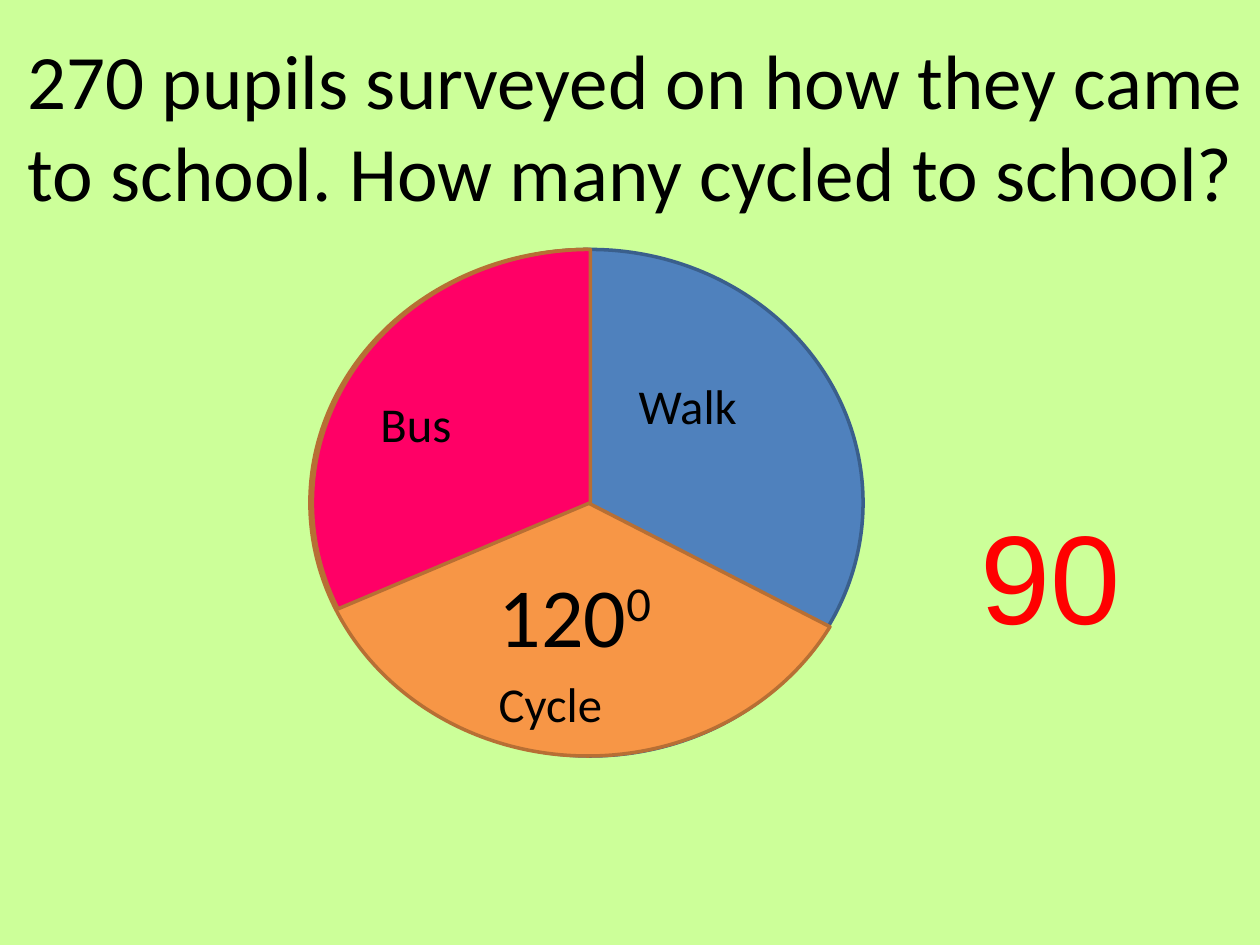
import pptx
import pptx.util
import pptx.dml.color
import pptx.enum.shapes
from pptx.util import Inches

THEME = {
    "background": "CCFF99", "ink": "000000", "answer": "FF0000",
    "walk": "4F81BD", "walk_line": "3A5F8C",
    "cycle": "F79646", "bus": "FF0066", "slice_line": "B76F34",
    "title_size": 44, "label_size": 48, "answer_size": 72,
}


def color(name):
    return pptx.dml.color.RGBColor.from_string(THEME[name])


def add_text(box, lines, size="label_size", ink="ink", font="Calibri"):
    """Each line is a list of (text, raised) pairs."""
    frame = box.text_frame
    frame.word_wrap = True
    for index, line in enumerate(lines):
        para = frame.add_paragraph() if index else frame.paragraphs[0]
        for text, raised in line:
            span = para.add_run()
            span.text = text
            span.font.name = font
            span.font.size = pptx.util.Pt(THEME[size])
            span.font.color.rgb = color(ink)
            if raised:
                span.font._element.set("baseline", "30000")


deck = pptx.Presentation()
deck.slide_width, deck.slide_height = Inches(10), Inches(7.5)
page = deck.slides.add_slide(deck.slide_layouts[6])
page.background.fill.solid()
page.background.fill.fore_color.rgb = color("background")

# Pie: a full disc for Walk, with the other slices laid over it.
# Slices end at 12 o'clock (270 degrees); angles run clockwise from 3 o'clock.
kinds = pptx.enum.shapes.MSO_SHAPE
for kind, left, width, fill, line, start in [
    (kinds.OVAL, 2.52, 4.33, "walk", "walk_line", None),
    (kinds.PIE, 2.46, 4.41, "cycle", "slice_line", 27.11),
    (kinds.PIE, 2.48, 4.41, "bus", "slice_line", 157.17),
]:
    piece = page.shapes.add_shape(
        kind, Inches(left), Inches(1.98), Inches(width), Inches(4.02))
    piece.shadow.inherit = False
    piece.fill.solid()
    piece.fill.fore_color.rgb = color(fill)
    piece.line.color.rgb = color(line)
    piece.line.width = pptx.util.Pt(2)
    if start is not None:
        for index, angle in enumerate((start, 270)):
            piece.adjustments[index] = angle * 0.6  # 60000ths of a degree / 100000

# Question
box = page.shapes.add_textbox(Inches(0.12), Inches(0.21), Inches(10.08), Inches(1.58))
question = "270 pupils surveyed on how they came to school. How many cycled to school?"
add_text(box, [[(question, False)]], size="title_size")

# Slice labels
for left, top, height, lines in [
    (3.86, 4.42, 1.72, [[("120", False), ("0", True)], [("Cycle", True)]]),
    (4.97, 2.85, 0.91, [[("Walk", True)]]),
    (2.92, 3, 0.91, [[("Bus", True)]]),
]:
    box = page.shapes.add_textbox(Inches(left), Inches(top), Inches(1.61), Inches(height))
    add_text(box, lines)

# Answer
box = page.shapes.add_textbox(Inches(7.68), Inches(3.91), Inches(1.73), Inches(1.31))
add_text(box, [[("90", False)]], size="answer_size", ink="answer", font="Arial")

deck.save("out.pptx")
